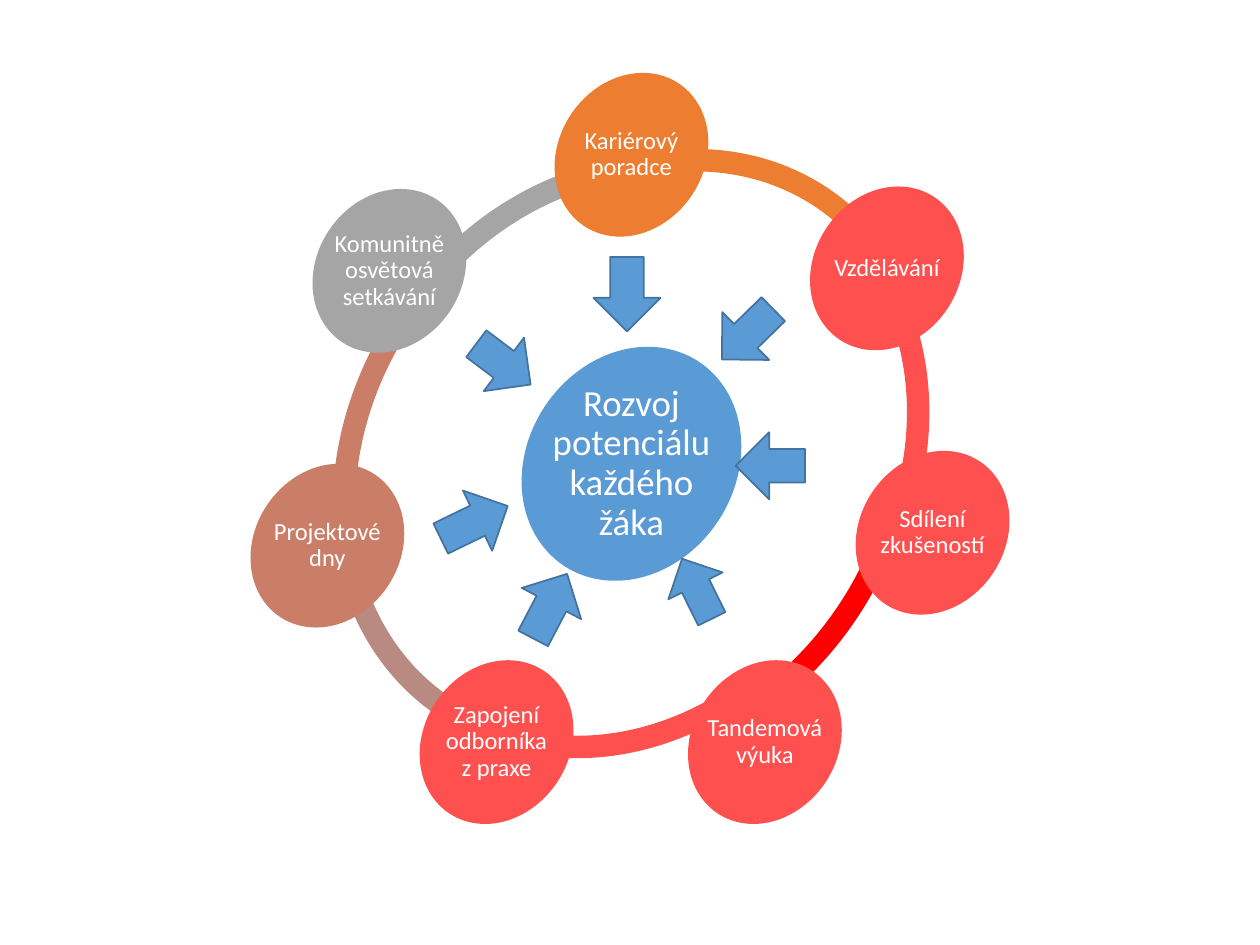
"""Draw a ring of seven school activities with arrows to a central goal."""
from math import atan2, cos, degrees, radians, sin
from typing import NamedTuple

from pptx import Presentation
from pptx.dml.color import RGBColor as Rgb
from pptx.enum.shapes import MSO_SHAPE as Kind
from pptx.enum.text import MSO_ANCHOR as Anchor, PP_ALIGN as Align
from pptx.util import Cm, Pt

HUES = {
    "gray": "A5A5A5", "clay": "CA7E67", "rose": "B98A82", "coral": "FF5050",
    "red": "FF0000", "orange": "ED7D31", "blue": "5B9BD5", "navy": "43739E",
    "white": "FFFFFF",
}
TILT = 33.5
SQUASH = 0.85
RING = 12.7
BAND = 0.042


class Arc(NamedTuple):
    """A piece of the ring: centre in cm, start and end in degrees."""
    x: float
    y: float
    start: float
    end: float
    hue: str


class Disc(NamedTuple):
    """A labelled disc: centre and sizes in cm."""
    x: float
    y: float
    hue: str
    text: str
    size: float = 3.45
    box: float = 2.44
    pad: float = 0.05
    font: int = 14


class Arrow(NamedTuple):
    """A block arrow: centre and size in cm, turn in degrees."""
    kind: Kind
    x: float
    y: float
    wide: float
    high: float
    turn: float


ARCS = [
    Arc(12.48, 9.21, 218.6, 270, "gray"),
    Arc(12.41, 9.31, 165.5, 219.6, "clay"),
    Arc(12.36, 9.16, 114.6, 164.2, "rose"),
    Arc(12.48, 9.21, 64.3, 115.7, "coral"),
    Arc(12.79, 9.46, 12.9, 64.3, "red"),
    Arc(13.03, 9.21, 324.6, 16, "coral"),
    Arc(13.17, 9.08, 267, 320.8, "orange"),
]
DISCS = [
    Disc(12.73, 9.35, "blue", "Rozvoj potenciálu každého žáka", 4.93, 3.48, 0.08, 21),
    Disc(12.73, 3.12, "orange", "Kariérový poradce"),
    Disc(17.88, 5.41, "coral", "Vzdělávání"),
    Disc(18.8, 10.74, "coral", "Sdílení zkušeností"),
    Disc(15.42, 14.96, "coral", "Tandemová výuka"),
    Disc(10.01, 14.96, "coral", "Zapojení odborníka z praxe"),
    Disc(6.6, 11, "clay", "Projektové dny"),
    Disc(7.85, 5.46, "gray", "Komunitně osvětová setkávání"),
]
ARROWS = [
    Arrow(Kind.DOWN_ARROW, 12.64, 5.93, 1.35, 1.5, 0),
    Arrow(Kind.DOWN_ARROW, 15.07, 6.74, 1.35, 1.45, 45.6),
    Arrow(Kind.DOWN_ARROW, 15.53, 9.39, 1.35, 1.4, 90),
    Arrow(Kind.DOWN_ARROW, 10.15, 7.34, 1.35, 1.37, 307),
    Arrow(Kind.UP_ARROW, 11.09, 12.22, 1.35, 1.47, 27.7),
    Arrow(Kind.RIGHT_ARROW, 9.56, 10.53, 1.5, 1.35, 334.1),
    Arrow(Kind.UP_ARROW, 14.05, 11.87, 1.22, 1.35, 333.7),
]


def hue(name: str) -> Rgb:
    """Look up a colour."""
    return Rgb.from_string(HUES[name])


def frame(x: float, y: float, wide: float, high: float) -> tuple:
    """Turn a centre and a size into left, top, width and height."""
    return Cm(x - wide / 2), Cm(y - high / 2), Cm(wide), Cm(high)


def add(slide, kind: Kind, area: tuple, fill: str, turn: float):
    """Add a plain filled shape."""
    shape = slide.shapes.add_shape(kind, *area)
    shape.shadow.inherit = False
    shape.fill.solid()
    shape.fill.fore_color.rgb = hue(fill)
    shape.line.fill.background()
    shape.rotation = turn
    return shape


def skew(angle: float) -> float:
    """Map a circle angle to the block arc value on the tilted ellipse."""
    turn = radians(angle - TILT)
    return degrees(atan2(sin(turn), SQUASH * cos(turn))) % 360 * 0.6


def draw_arc(slide, arc: Arc) -> None:
    """Draw one piece of the ring."""
    area = frame(arc.x, arc.y, RING * SQUASH, RING)
    shape = add(slide, Kind.BLOCK_ARC, area, arc.hue, TILT)
    for i, value in enumerate((skew(arc.start), skew(arc.end), BAND)):
        shape.adjustments[i] = value


def draw_disc(slide, disc: Disc) -> None:
    """Draw one tilted disc and its label."""
    area = frame(disc.x, disc.y, disc.size * SQUASH, disc.size)
    add(slide, Kind.OVAL, area, disc.hue, TILT)
    box = slide.shapes.add_textbox(*frame(disc.x, disc.y, disc.box, disc.box))
    text = box.text_frame
    text.word_wrap = True
    text.vertical_anchor = Anchor.MIDDLE
    text.margin_left = text.margin_right = Cm(disc.pad)
    text.margin_top = text.margin_bottom = Cm(disc.pad)
    para = text.paragraphs[0]
    para.text = disc.text
    para.alignment = Align.CENTER
    para.line_spacing = 0.9
    para.font.name = "Calibri"
    para.font.size = Pt(disc.font)
    para.font.color.rgb = hue("white")


def draw_arrow(slide, arrow: Arrow) -> None:
    """Draw one outlined arrow."""
    area = frame(arrow.x, arrow.y, arrow.wide, arrow.high)
    shape = add(slide, arrow.kind, area, "blue", arrow.turn)
    shape.line.color.rgb = hue("navy")
    shape.line.width = Pt(1)


def main() -> None:
    """Build and save the slide."""
    deck = Presentation()
    deck.slide_width, deck.slide_height = Cm(25.4), Cm(19.05)
    slide = deck.slides.add_slide(deck.slide_layouts[6])
    for arc in ARCS:
        draw_arc(slide, arc)
    for disc in DISCS:
        draw_disc(slide, disc)
    for arrow in ARROWS:
        draw_arrow(slide, arrow)
    deck.save("out.pptx")


if __name__ == "__main__":
    main()
